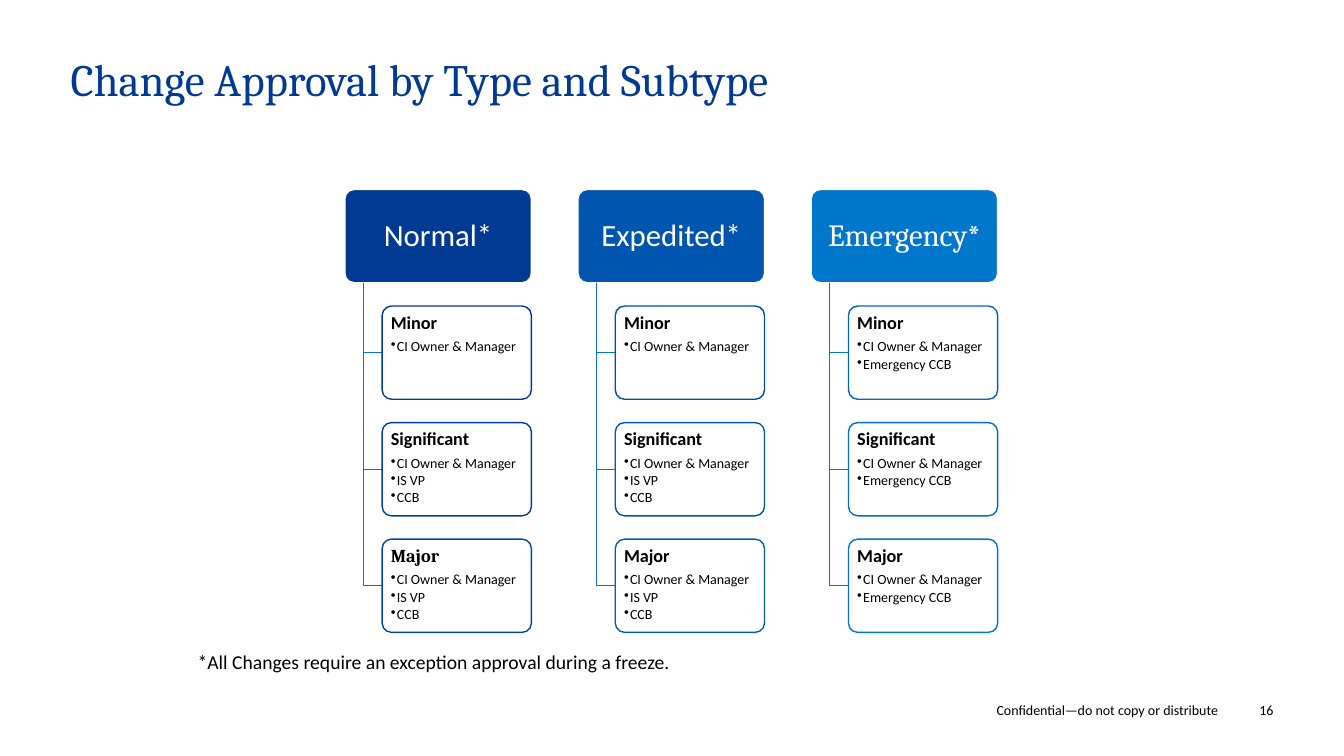
"""Builds the slide on change approval by type and subtype."""
import pptx
import pptx.util
import pptx.dml.color
import pptx.enum.shapes
import pptx.enum.text
import pptx.oxml.ns
import lxml.etree

Inches, Pt = pptx.util.Inches, pptx.util.Pt
ALIGN = pptx.enum.text.PP_ALIGN
ANCHOR = pptx.enum.text.MSO_ANCHOR
ROUND = pptx.enum.shapes.MSO_SHAPE.ROUNDED_RECTANGLE

TITLE = "Change Approval by Type and Subtype"
NOTE = "*All Changes require an exception approval during a freeze."
FOOT = "Confidential—do not copy or distribute"
PAGE = "16"
SOLO = ["CI Owner & Manager"]
BOARD = SOLO + ["IS VP", "CCB"]
URGENT = SOLO + ["Emergency CCB"]
TYPES = [
    ("Normal*", "Calibri", "003A93", [
        ("Minor", "Calibri", "003A93", SOLO),
        ("Significant", "Calibri", "00409A", BOARD),
        ("Major", "Cambria", "0047A1", BOARD)]),
    ("Expedited*", "Calibri", "0056AE", [
        ("Minor", "Calibri", "004EA8", SOLO),
        ("Significant", "Calibri", "0056AE", BOARD),
        ("Major", "Calibri", "005EB5", BOARD)]),
    ("Emergency*", "Cambria", "0077CA", [
        ("Minor", "Calibri", "0066BC", URGENT),
        ("Significant", "Calibri", "006EC3", URGENT),
        ("Major", "Calibri", "0077CA", URGENT)]),
]
LEFT, TOP = 3.42, 1.88
WIDE = 1.85
HIGH = WIDE / 2
STEP = 1.25


def rgb(code):
    """Turn a hex string into a colour."""
    return pptx.dml.color.RGBColor.from_string(code)


def child(node, tag, **attrs):
    """Add a drawing element to a node."""
    return lxml.etree.SubElement(node, pptx.oxml.ns.qn(tag), **attrs)


def write(frame, text, size=10, font="Calibri", color="000000", bold=False,
          align=ALIGN.LEFT, space=1, after=0, bullet=False, more=False):
    """Write one formatted paragraph into a text frame."""
    para = frame.add_paragraph() if more else frame.paragraphs[0]
    para.alignment, para.line_spacing = align, space
    para.space_before, para.space_after = Pt(0), Pt(after)
    if bullet:
        para.level = 1
        props = para._p.get_or_add_pPr()
        props.set("marL", str(Inches(0.06)))
        props.set("indent", str(Inches(-0.06)))
        child(props, "a:buChar", char="•")
    run = para.add_run()
    run.text = text
    run.font.size, run.font.name, run.font.bold = Pt(size), font, bold
    run.font.color.rgb = rgb(color)


def inset(frame, side, edge, anchor=ANCHOR.TOP):
    """Set the margins, wrapping and anchor of a text frame."""
    frame.margin_left = frame.margin_right = Inches(side)
    frame.margin_top = frame.margin_bottom = Inches(edge)
    frame.word_wrap, frame.vertical_anchor = True, anchor
    return frame


def place(slide, at, pad=0, anchor=ANCHOR.TOP):
    """Add a text box and return its frame."""
    box = slide.shapes.add_textbox(*map(Inches, at))
    return inset(box.text_frame, pad, pad, anchor)


def card(slide, at, fill, line):
    """Add a rounded box."""
    box = slide.shapes.add_shape(ROUND, *map(Inches, at))
    box.adjustments[0] = 0.1
    box.shadow.inherit = False
    box.fill.solid()
    box.fill.fore_color.rgb = rgb(fill)
    box.line.color.rgb, box.line.width = rgb(line), Pt(1)
    return box


def branch(slide, x, top, end, low):
    """Draw the elbow from a header down to a subtype box."""
    pen = slide.shapes.build_freeform(Inches(x), Inches(top))
    pen.add_line_segments(
        [(Inches(x), Inches(low)), (Inches(end), Inches(low))], close=False)
    elbow = pen.convert_to_shape()
    elbow.shadow.inherit = False
    elbow.fill.background()
    elbow.line.color.rgb, elbow.line.width = rgb("0077CA"), Pt(1)


def column(slide, x, name, font, color, subs):
    """Draw one change type with its subtypes."""
    head = card(slide, (x, TOP, WIDE, HIGH), color, "FFFFFF")
    frame = inset(head.text_frame, 0.07, 0.05, ANCHOR.MIDDLE)
    write(frame, name, size=22, font=font, color="FFFFFF",
          align=ALIGN.CENTER, space=0.9)
    inner = x + WIDE * 0.2
    for row, (sub, face, line, roles) in enumerate(subs, 1):
        y = TOP + row * HIGH * STEP
        branch(slide, x + WIDE * 0.1, TOP + HIGH, inner, y + HIGH / 2)
        box = card(slide, (inner, y, WIDE * 0.8, HIGH), "FFFFFF", line)
        tint = box.fill._xPr.find(".//" + pptx.oxml.ns.qn("a:srgbClr"))
        child(tint, "a:alpha", val="90000")
        frame = inset(box.text_frame, 0.06, 0.05)
        write(frame, sub, size=13, font=face, bold=True, space=0.9, after=4.5)
        for role in roles:
            write(frame, role, space=0.9, after=1.5, bullet=True, more=True)


def main():
    """Build and save the slide."""
    deck = pptx.Presentation()
    deck.slide_width, deck.slide_height = Inches(13.33), Inches(7.5)
    slide = deck.slides.add_slide(deck.slide_layouts[5])
    title = slide.shapes.title
    title.left, title.top = Inches(0.7), Inches(0.57)
    title.width, title.height = Inches(11.92), Inches(1.05)
    write(inset(title.text_frame, 0, 0), TITLE, size=32, font="Cambria",
          color="003A93", space=0.9)
    for col, kind in enumerate(TYPES):
        column(slide, LEFT + col * WIDE * STEP, *kind)
    write(place(slide, (1.91, 6.4, 11.14, 0.37), 0.05), NOTE, size=14)
    write(place(slide, (3.65, 6.96, 8.43, 0.17), anchor=ANCHOR.BOTTOM), FOOT,
          align=ALIGN.RIGHT)
    write(place(slide, (12.25, 6.96, 0.38, 0.17)), PAGE, align=ALIGN.RIGHT)
    deck.save("out.pptx")


if __name__ == "__main__":
    main()
